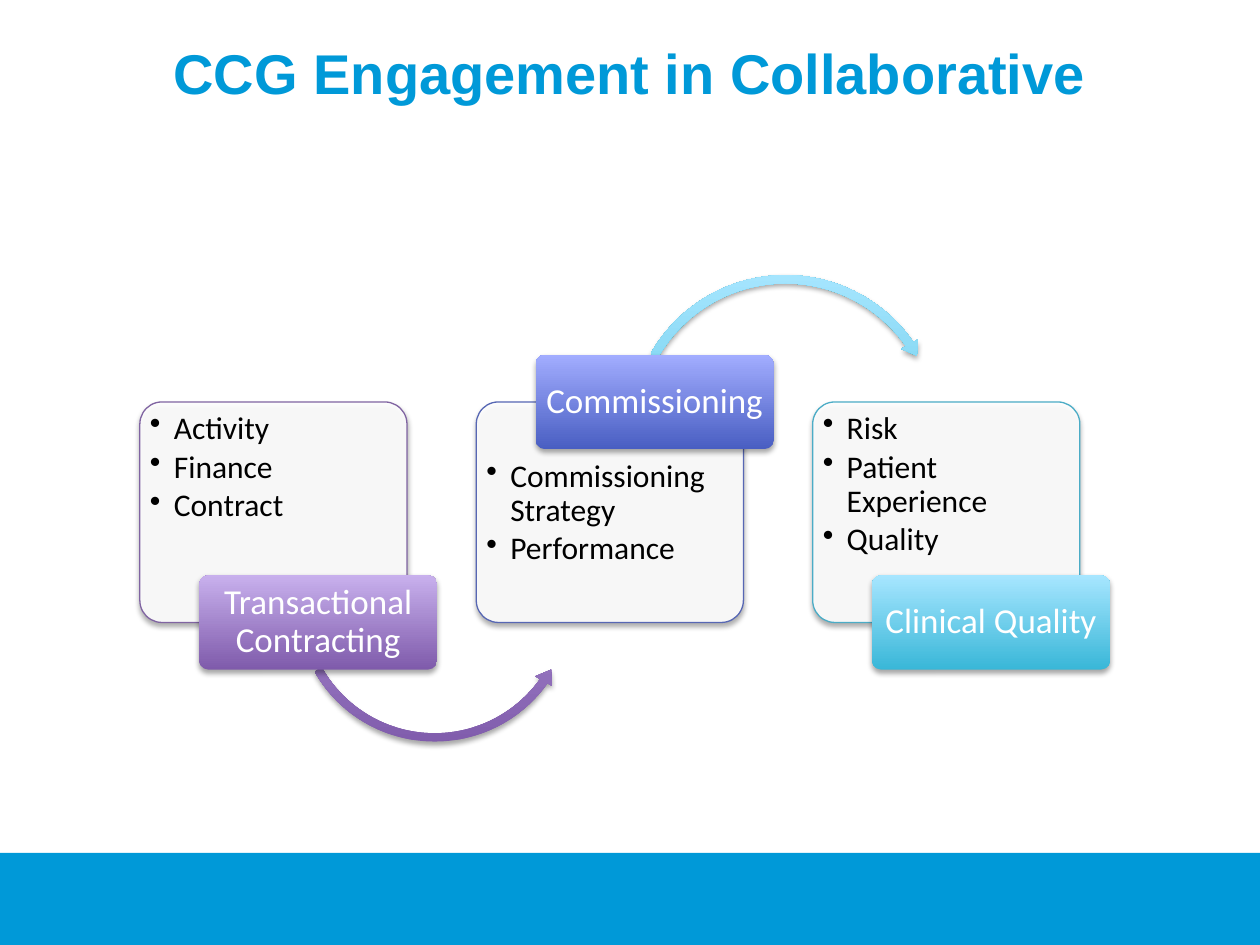
from lxml import etree
from pptx import Presentation
from pptx.dml.color import RGBColor
from pptx.enum.shapes import MSO_SHAPE
from pptx.enum.text import MSO_ANCHOR, PP_ALIGN
from pptx.oxml.ns import qn
from pptx.util import Inches, Pt

ROUND, BAR = MSO_SHAPE.ROUNDED_RECTANGLE, MSO_SHAPE.RECTANGLE
OVER, UNDER = MSO_SHAPE.CIRCULAR_ARROW, MSO_SHAPE.LEFT_CIRCULAR_ARROW
CENTER, LEFT = PP_ALIGN.CENTER, PP_ALIGN.LEFT
MIDDLE, TOP = MSO_ANCHOR.MIDDLE, MSO_ANCHOR.TOP

WIDTH, HEIGHT = 10, 7.5
BLUE = "0099D8"
TITLE = "CCG Engagement in Collaborative"
PURPLE, INDIGO, CYAN = ("7F5BAB", "C8B0ED"), ("495EC2", "A2ADFF"), ("39B7D8", "A7E6FF")

STAGES = [
    {"label": "Transactional Contracting", "items": ["Activity", "Finance", "Contract"],
     "outline": "8064A2", "colors": PURPLE, "label_on_top": False,
     "arrow": {"kind": UNDER, "colors": PURPLE, "left": 2.31, "top": 3.65, "size": 2.28,
               "adjust": [0.029, 3.518, 21.274, 90.245, 0.034]}},
    {"label": "Commissioning", "items": ["Commissioning Strategy", "Performance"],
     "outline": "5767B4", "colors": INDIGO, "label_on_top": True,
     "arrow": {"kind": OVER, "colors": CYAN, "left": 4.96, "top": 2.14, "size": 2.55,
               "adjust": [0.026, 3.122, 195.123, 125.755, 0.03]}},
    {"label": "Clinical Quality", "items": ["Risk", "Patient Experience", "Quality"],
     "outline": "4BACC6", "colors": CYAN, "label_on_top": False, "arrow": None},
]

FIRST_LEFT, PITCH = 1.11, 2.67
CARD_TOP, CARD_WIDTH, CARD_HEIGHT = 3.19, 2.12, 1.75
LABEL_SHIFT, LABEL_WIDTH, LABEL_HEIGHT = 0.47, 1.89, 0.75
CARD_PAD, LABEL_PAD = 0.04, 0.02
LIST_HEIGHT = 1.29

TITLE_FORMAT = {"name": "Arial", "size": Pt(32), "bold": True}
LIST_FORMAT = {"name": "Calibri", "size": Pt(18)}
LABEL_FORMAT = {"name": "Calibri", "size": Pt(20)}


def color(value):
    return RGBColor.from_string(value)


def add_shape(page, kind, area, fill, outline=None, adjust=(), alpha=None, shadow=True):
    shape = page.shapes.add_shape(kind, *map(Inches, area))
    for index, value in enumerate(adjust):
        shape.adjustments[index] = value
    if isinstance(fill, tuple):
        shape.fill.gradient()
        shape.fill.gradient_angle = 90
        for stop, value in zip(shape.fill.gradient_stops, fill):
            stop.color.rgb = color(value)
    else:
        shape.fill.solid()
        shape.fill.fore_color.rgb = color(fill)
    if alpha:
        tone = shape._element.spPr.find(".//" + qn("a:srgbClr"))
        etree.SubElement(tone, qn("a:alpha"), val=str(alpha * 1000))
    if outline:
        shape.line.color.rgb = color(outline)
        shape.line.width = Pt(0.75)
    else:
        shape.line.fill.background()
    shape.shadow.inherit = False
    if shadow:
        effects = shape._element.spPr.find(qn("a:effectLst"))
        outer = etree.SubElement(effects, qn("a:outerShdw"), blurRad=str(Pt(3.1)),
                                 dist=str(Pt(1.8)), dir="5400000", rotWithShape="0")
        tone = etree.SubElement(outer, qn("a:srgbClr"), val="000000")
        etree.SubElement(tone, qn("a:alpha"), val="35000")


def add_text(page, area, lines, format_values, tone, align=CENTER, anchor=MIDDLE,
             insets=(0.04, 0.03), spacing=0.9, after=0, bullets=False):
    box = page.shapes.add_textbox(*map(Inches, area))
    frame = box.text_frame
    frame.word_wrap = True
    frame.vertical_anchor = anchor
    frame.margin_left = frame.margin_right = Inches(insets[0])
    frame.margin_top = frame.margin_bottom = Inches(insets[1])
    for index, line in enumerate(lines):
        para = frame.add_paragraph() if index else frame.paragraphs[0]
        para.alignment = align
        para.line_spacing = spacing
        para.space_after = Pt(after)
        if bullets:
            para.level = 1
            props = para._p.get_or_add_pPr()
            props.set("marL", str(Inches(0.19)))
            props.set("indent", str(-Inches(0.19)))
            etree.SubElement(props, qn("a:buChar"), char="•")
        span = para.add_run()
        span.text = line
        for name, value in format_values.items():
            setattr(span.font, name, value)
        span.font.color.rgb = color(tone)


def inner(area, pad):
    left, top, width, height = area
    return left + pad, top + pad, width - 2 * pad, height - 2 * pad


def add_stage(page, column, stage):
    left = FIRST_LEFT + column * PITCH
    card = (left, CARD_TOP, CARD_WIDTH, CARD_HEIGHT)
    edge = CARD_TOP if stage["label_on_top"] else CARD_TOP + CARD_HEIGHT
    label = (left + LABEL_SHIFT, edge - LABEL_HEIGHT / 2, LABEL_WIDTH, LABEL_HEIGHT)

    add_shape(page, ROUND, card, "FFFFFF", stage["outline"], [0.1], alpha=90)
    text_left, text_top, text_width, text_height = inner(card, CARD_PAD)
    if stage["label_on_top"]:
        text_top += text_height - LIST_HEIGHT
    add_text(page, (text_left, text_top, text_width, LIST_HEIGHT), stage["items"],
             LIST_FORMAT, "000000", LEFT, TOP, (0.04, 0.04), after=2.7, bullets=True)

    arrow = stage["arrow"]
    if arrow:
        area = (arrow["left"], arrow["top"], arrow["size"], arrow["size"])
        add_shape(page, arrow["kind"], area, arrow["colors"], adjust=arrow["adjust"])

    add_shape(page, ROUND, label, stage["colors"], adjust=[0.1])
    add_text(page, inner(label, LABEL_PAD), [stage["label"]], LABEL_FORMAT, "FFFFFF")


def main():
    deck = Presentation()
    deck.slide_width, deck.slide_height = Inches(WIDTH), Inches(HEIGHT)
    page = deck.slides.add_slide(deck.slide_layouts[6])
    add_shape(page, BAR, (0, 6.77, WIDTH, HEIGHT - 6.77), BLUE, shadow=False)
    add_text(page, (0, 0.17, WIDTH, 0.8), [TITLE], TITLE_FORMAT, BLUE,
             insets=(0.1, 0.05), spacing=1.0)
    for column, stage in enumerate(STAGES):
        add_stage(page, column, stage)
    deck.save("out.pptx")


if __name__ == "__main__":
    main()
